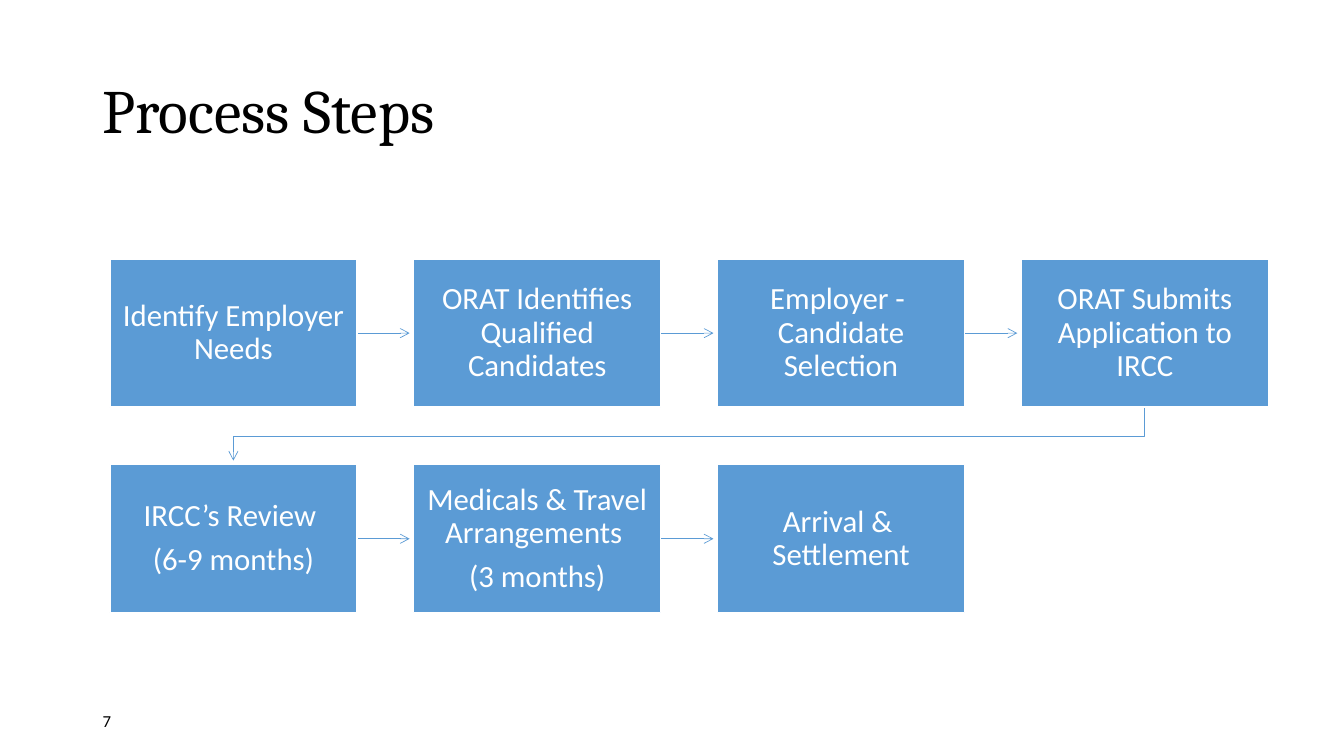
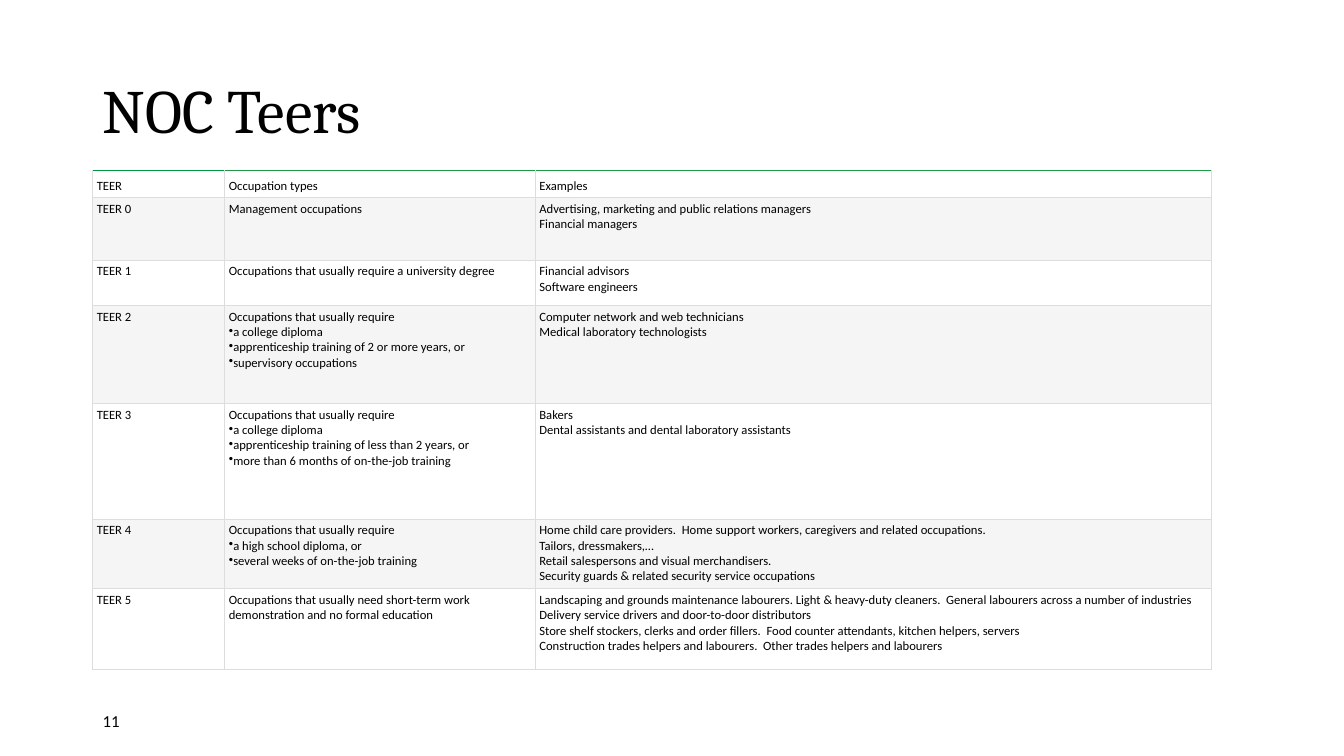
"""Build the process flow and occupation table slides."""
from dataclasses import dataclass
from typing import Any

from lxml import etree
from pptx import Presentation
from pptx import util as u
from pptx.dml.color import RGBColor
from pptx.enum import shapes, text
from pptx.oxml.ns import qn
from pptx.slide import Slide

BLACK, WHITE, BLUE = "000000", "FFFFFF", "5B9BD5"
GRID, BAND = "DDDDDD", "F5F5F5"
BODY_FONT, TITLE_FONT = "Calibri", "Cambria"

STEP_LEFT, STEP_TOP = 1.09, 2.57
STEP_WIDTH, STEP_HEIGHT = 2.45, 1.47
STEPS_PER_ROW = 4
STEP_PITCH_X, STEP_PITCH_Y = 9.04 / (STEPS_PER_ROW - 1), 2.04
ARROW_GAP = 0.04

Point = tuple[float, float]


@dataclass(frozen=True)
class TextStyle:
    size: float
    color: str = BLACK
    font: str = BODY_FONT
    paragraph: tuple[tuple[str, Any], ...] = ()


@dataclass(frozen=True)
class Step:
    lines: tuple[str, ...]
    index: int

    @property
    def left(self) -> float:
        return STEP_LEFT + self.index % STEPS_PER_ROW * STEP_PITCH_X

    @property
    def top(self) -> float:
        return STEP_TOP + self.index // STEPS_PER_ROW * STEP_PITCH_Y


@dataclass(frozen=True)
class Column:
    heading: str
    width: float
    accent: str


@dataclass(frozen=True)
class Teer:
    name: str
    height: float
    occupations: tuple[str, ...]
    examples: tuple[str, ...]


TITLE_STYLE = TextStyle(44, font=TITLE_FONT, paragraph=(("line_spacing", 0.9),))
NUMBER_STYLE = TextStyle(12)
TABLE_STYLE = TextStyle(9)
STEP_STYLE = TextStyle(22, WHITE, paragraph=(
    ("alignment", text.PP_ALIGN.CENTER),
    ("line_spacing", 0.9),
    ("space_after", u.Pt(7.7)),
))

STEP_TEXTS = (
    ("Identify Employer Needs",),
    ("ORAT Identifies Qualified Candidates",),
    ("Employer -  Candidate Selection",),
    ("ORAT Submits Application to IRCC",),
    ("IRCC’s Review ", "(6-9 months)"),
    ("Medicals & Travel Arrangements ", "(3 months)"),
    ("Arrival &  Settlement",),
)

HEADER_HEIGHT = 0.27
COLUMNS = (
    Column("TEER", 1.31, "009446"),
    Column("Occupation types", 3.08, "209546"),
    Column("Examples", 6.71, "209A46"),
)
TEERS = (
    Teer("TEER 0", 0.62, ("Management occupations",),
         ("Advertising, marketing and public relations managers", "Financial managers")),
    Teer("TEER 1", 0.45, ("Occupations that usually require a university degree",),
         ("Financial advisors", "Software engineers")),
    Teer("TEER 2", 0.97,
         ("Occupations that usually require", "•a college diploma",
          "•apprenticeship training of 2 or more years, or", "•supervisory occupations"),
         ("Computer network and web technicians", "Medical laboratory technologists")),
    Teer("TEER 3", 1.15,
         ("Occupations that usually require", "•a college diploma",
          "•apprenticeship training of less than 2 years, or",
          "•more than 6 months of on-the-job training"),
         ("Bakers", "Dental assistants and dental laboratory assistants")),
    Teer("TEER 4", 0.69,
         ("Occupations that usually require", "•a high school diploma, or",
          "•several weeks of on-the-job training"),
         ("Home child care providers.  Home support workers, caregivers and related occupations.",
          "Tailors, dressmakers,…", "Retail salespersons and visual merchandisers.",
          "Security guards & related security service occupations")),
    Teer("TEER 5", 0.8,
         ("Occupations that usually need short-term work demonstration and no formal education",),
         ("Landscaping and grounds maintenance labourers. Light & heavy-duty cleaners.  "
          "General labourers across a number of industries",
          "Delivery service drivers and door-to-door distributors",
          "Store shelf stockers, clerks and order fillers.  Food counter attendants, "
          "kitchen helpers, servers",
          "Construction trades helpers and labourers.  Other trades helpers and labourers")),
)


def rgb(color: str) -> RGBColor:
    return RGBColor.from_string(color)


def apply_format(target: Any, values: dict[str, Any]) -> None:
    for name, value in values.items():
        setattr(target, name, value)


def write_lines(frame: Any, lines: tuple[str, ...], style: TextStyle) -> None:
    for index, line in enumerate(lines):
        paragraph = frame.add_paragraph() if index else frame.paragraphs[0]
        apply_format(paragraph, dict(style.paragraph))
        if line.startswith("•"):
            properties = paragraph._p.get_or_add_pPr()
            apply_bullet = {"marL": "0", "indent": "0"}
            properties.attrib.update(apply_bullet)
            etree.SubElement(properties, qn("a:buChar"), char="•")
        run = paragraph.add_run()
        run.text = line.removeprefix("•")
        apply_format(run.font, {"name": style.font, "size": u.Pt(style.size)})
        run.font.color.rgb = rgb(style.color)


def add_label(slide: Slide, box: tuple[float, float, float, float],
              label: str, style: TextStyle) -> None:
    frame = slide.shapes.add_textbox(*map(u.Inches, box)).text_frame
    apply_format(frame, {"word_wrap": True, "vertical_anchor": text.MSO_ANCHOR.MIDDLE})
    write_lines(frame, (label,), style)


def add_base_slide(presentation: Any, title: str, number: str) -> Slide:
    slide = presentation.slides.add_slide(presentation.slide_layouts[6])
    add_label(slide, (0.92, 0.4, 11.5, 1.45), title, TITLE_STYLE)
    add_label(slide, (0.92, 6.95, 3, 0.4), number, NUMBER_STYLE)
    return slide


def draw_step(slide: Slide, step: Step) -> None:
    box = (step.left, step.top, STEP_WIDTH, STEP_HEIGHT)
    shape = slide.shapes.add_shape(shapes.MSO_SHAPE.RECTANGLE, *map(u.Inches, box))
    shape.shadow.inherit = False
    shape.fill.solid()
    shape.fill.fore_color.rgb = rgb(BLUE)
    shape.line.color.rgb = rgb(WHITE)
    shape.line.width = u.Pt(1)
    apply_format(shape.text_frame, {
        "word_wrap": True,
        "vertical_anchor": text.MSO_ANCHOR.MIDDLE,
        "margin_left": u.Inches(0.12), "margin_right": u.Inches(0.12),
        "margin_top": u.Inches(0.13), "margin_bottom": u.Inches(0.13),
    })
    write_lines(shape.text_frame, step.lines, STEP_STYLE)


def draw_arrow(slide: Slide, points: list[Point]) -> None:
    corners = [(u.Inches(x), u.Inches(y)) for x, y in points]
    if len(corners) == 2:
        shape = slide.shapes.add_connector(
            shapes.MSO_CONNECTOR.STRAIGHT, *corners[0], *corners[1])
    else:
        builder = slide.shapes.build_freeform(*corners[0])
        builder.add_line_segments(corners[1:], close=False)
        shape = builder.convert_to_shape()
        shape.fill.background()
    shape.line.color.rgb = rgb(BLUE)
    shape.line.width = u.Pt(0.5)
    properties = shape._element.spPr
    etree.SubElement(properties.find(qn("a:ln")), qn("a:tailEnd"), type="arrow")
    etree.SubElement(properties, qn("a:effectLst"))


def arrow_points(start: Step, end: Step) -> list[Point]:
    if start.top == end.top:
        middle = start.top + STEP_HEIGHT / 2
        return [(start.left + STEP_WIDTH, middle), (end.left - ARROW_GAP, middle)]
    start_x, end_x = (step.left + STEP_WIDTH / 2 for step in (start, end))
    bottom = start.top + STEP_HEIGHT
    bend = (bottom + end.top) / 2
    return [(start_x, bottom), (start_x, bend), (end_x, bend), (end_x, end.top - ARROW_GAP)]


def build_process_slide(presentation: Any) -> None:
    slide = add_base_slide(presentation, "Process Steps", "7")
    steps = [Step(lines, index) for index, lines in enumerate(STEP_TEXTS)]
    for start, end in zip(steps, steps[1:]):
        draw_arrow(slide, arrow_points(start, end))
    for step in steps:
        draw_step(slide, step)


def fill_cell(cell: Any, lines: tuple[str, ...], fill: str, top: str, anchor: Any) -> None:
    properties = cell._tc.get_or_add_tcPr()
    for side, color in {"L": GRID, "R": GRID, "T": top, "B": GRID}.items():
        border = etree.SubElement(properties, qn(f"a:ln{side}"), w=str(u.Pt(0.75)))
        solid = etree.SubElement(border, qn("a:solidFill"))
        etree.SubElement(solid, qn("a:srgbClr"), val=color)
    cell.fill.solid()
    cell.fill.fore_color.rgb = rgb(fill)
    margins = {f"margin_{side}": u.Inches(0.04) for side in ("left", "right", "top", "bottom")}
    apply_format(cell, margins | {"vertical_anchor": anchor})
    write_lines(cell.text_frame, lines, TABLE_STYLE)


def build_teer_slide(presentation: Any) -> None:
    slide = add_base_slide(presentation, "NOC Teers", "11")
    heights = [HEADER_HEIGHT, *(teer.height for teer in TEERS)]
    width = sum(column.width for column in COLUMNS)
    box = (0.92, 1.69, width, sum(heights))
    table = slide.shapes.add_table(len(heights), len(COLUMNS), *map(u.Inches, box)).table
    apply_format(table, {"first_row": False, "horz_banding": False})
    for row, height in zip(table.rows, heights):
        row.height = u.Inches(height)
    for index, column in enumerate(COLUMNS):
        table.columns[index].width = u.Inches(column.width)
        fill_cell(table.cell(0, index), (column.heading,), WHITE,
                  column.accent, text.MSO_ANCHOR.BOTTOM)
    for row_index, teer in enumerate(TEERS, start=1):
        fill = BAND if row_index % 2 else WHITE
        for index, lines in enumerate(((teer.name,), teer.occupations, teer.examples)):
            fill_cell(table.cell(row_index, index), lines, fill, GRID, text.MSO_ANCHOR.TOP)


def main() -> None:
    presentation = Presentation()
    apply_format(presentation, {"slide_width": u.Inches(13.33), "slide_height": u.Inches(7.5)})
    build_process_slide(presentation)
    build_teer_slide(presentation)
    presentation.save("out.pptx")


if __name__ == "__main__":
    main()
